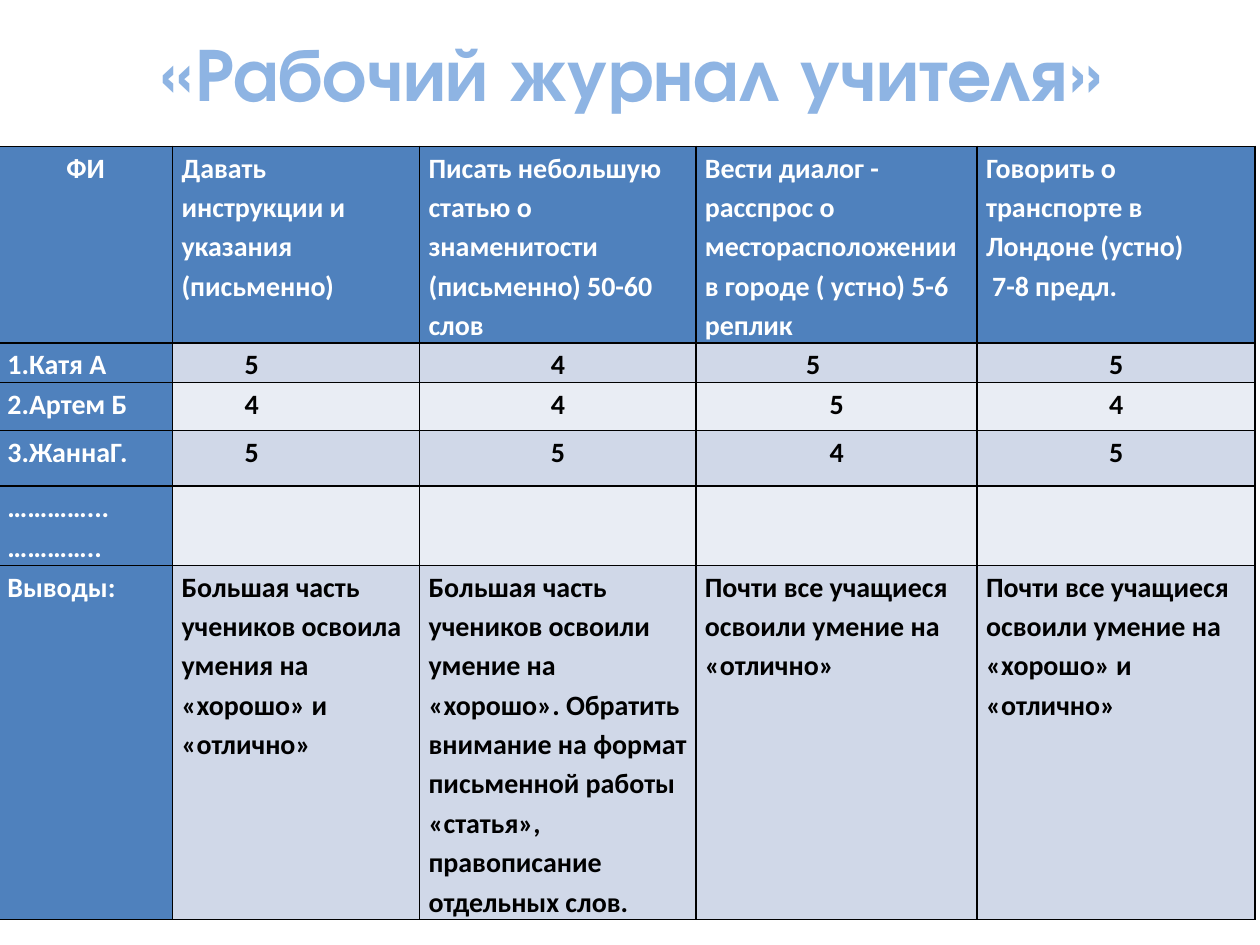
from lxml.etree import SubElement
from pptx import Presentation
from pptx.dml.color import RGBColor
from pptx.enum.text import MSO_ANCHOR, PP_ALIGN
from pptx.oxml.ns import qn
from pptx.util import Cm, Pt

WHITE = RGBColor(0xFF, 0xFF, 0xFF)
BLACK = RGBColor(0x00, 0x00, 0x00)
TITLE_BLUE = RGBColor(0x8E, 0xB4, 0xE3)
HEADER_BLUE = RGBColor(0x4F, 0x81, 0xBD)
BAND_DARK = RGBColor(0xD0, 0xD8, 0xE8)
BAND_LIGHT = RGBColor(0xE9, 0xED, 0xF4)

JOURNAL = [
    ["ФИ",
     "Давать инструкции и указания (письменно)",
     "Писать небольшую статью о знаменитости\n(письменно) 50-60 слов",
     "Вести диалог - расспрос о месторасположении\nв городе ( устно) 5-6 реплик",
     "Говорить о транспорте в Лондоне (устно)\n7-8 предл."],
    ["1.Катя А", "5", "4", "5", "5"],
    ["2.Артем Б", "4", "4", "5", "4"],
    ["3.ЖаннаГ.", "5", "5", "4", "5"],
    ["…………...\n…………..", "", "", "", ""],
    ["Выводы:",
     "Большая часть учеников освоила умения на «хорошо» и «отлично»",
     "Большая часть учеников освоили умение на «хорошо». Обратить внимание "
     "на формат письменной работы «статья», правописание отдельных слов.",
     "Почти все учащиеся освоили умение на «отлично»",
     "Почти все учащиеся освоили умение на «хорошо» и «отлично»"],
]
COLUMN_WIDTHS = [3.51, 4.98, 5.57, 5.67, 5.6]
# Tall enough for every line of text at 1.15 spacing
ROW_HEIGHTS = [3.96, 0.8, 0.97, 1.12, 1.6, 7.14]
# Left indents in cm by (row, column, paragraph)
INDENTS = {(0, 4, 1): 0.12, (1, 1, 0): 1.27, (2, 1, 0): 1.27,
           (3, 1, 0): 1.27, (1, 3, 0): 2.04}
CELL_MARGINS = {"margin_left": Cm(0.18), "margin_right": Cm(0.18),
                "margin_top": Cm(0), "margin_bottom": Cm(0)}
TITLE_FONT = {"name": "TeX Gyre Adventor", "size": Pt(43.2), "bold": True}
CELL_FONT = {"name": "Calibri", "size": Pt(16), "bold": True}


def set_font(font, values, color):
    for name, value in values.items():
        setattr(font, name, value)
    font.color.rgb = color


def add_borders(cell):
    properties = cell._tc.get_or_add_tcPr()
    for side in ("a:lnL", "a:lnR", "a:lnT", "a:lnB"):
        line = SubElement(properties, qn(side), w=str(Pt(1)))
        fill = SubElement(line, qn("a:solidFill"))
        SubElement(fill, qn("a:srgbClr"), val=str(BLACK))


presentation = Presentation()
presentation.slide_width = Cm(25.4)
presentation.slide_height = Cm(19.05)
slide = presentation.slides.add_slide(presentation.slide_layouts[6])

# Title
title = slide.shapes.add_textbox(Cm(1.3), Cm(0.33), Cm(22.86), Cm(2.21)).text_frame
title.word_wrap = True
title.vertical_anchor = MSO_ANCHOR.MIDDLE
heading = title.paragraphs[0]
heading.text = "«Рабочий журнал учителя»"
heading.alignment = PP_ALIGN.CENTER
set_font(heading.runs[0].font, TITLE_FONT, TITLE_BLUE)

# Journal grid
journal = slide.shapes.add_table(
    len(ROW_HEIGHTS), len(COLUMN_WIDTHS), Cm(-0.03), Cm(2.95),
    Cm(sum(COLUMN_WIDTHS)), Cm(sum(ROW_HEIGHTS))).table
for column, width in zip(journal.columns, COLUMN_WIDTHS):
    column.width = Cm(width)
for row, height in zip(journal.rows, ROW_HEIGHTS):
    row.height = Cm(height)

# Journal entries
for r, entries in enumerate(JOURNAL):
    for c, entry in enumerate(entries):
        cell = journal.cell(r, c)
        for name, value in CELL_MARGINS.items():
            setattr(cell, name, value)
        is_header = r == 0 or c == 0
        band = BAND_DARK if r % 2 else BAND_LIGHT
        add_borders(cell)
        cell.fill.solid()
        cell.fill.fore_color.rgb = HEADER_BLUE if is_header else band
        cell.text = entry
        for p, paragraph in enumerate(cell.text_frame.paragraphs):
            indent = INDENTS.get((r, c, p))
            centered = entry == "ФИ" or (entry.isdigit() and indent is None)
            paragraph.alignment = PP_ALIGN.CENTER if centered else PP_ALIGN.LEFT
            paragraph.line_spacing = 1.15
            if indent:
                paragraph._p.get_or_add_pPr().set("marL", str(Cm(indent)))
            for run in paragraph.runs:
                set_font(run.font, CELL_FONT, WHITE if is_header else BLACK)

presentation.save("out.pptx")
